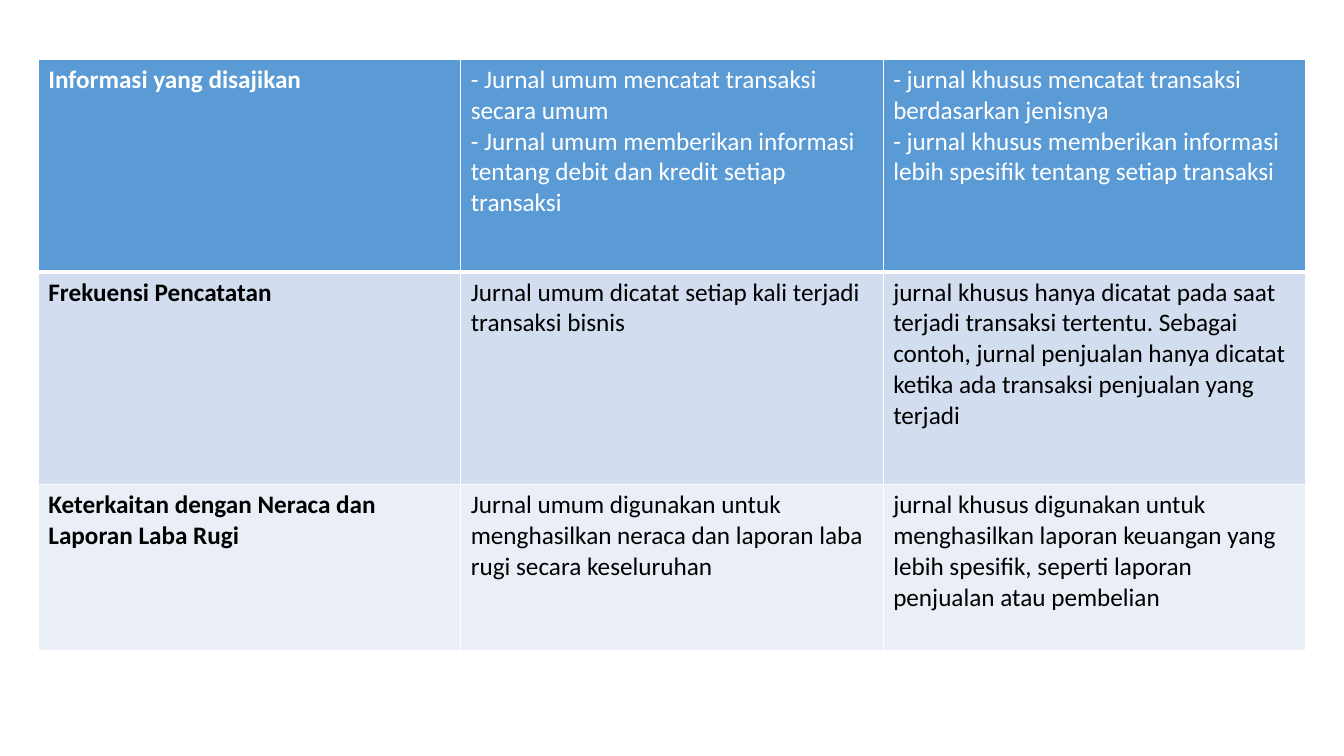
from dataclasses import dataclass

from lxml.etree import SubElement
from pptx import Presentation
from pptx.dml.color import RGBColor as RGB
from pptx.oxml.ns import qn
from pptx.util import Inches, Pt


@dataclass(frozen=True)
class Theme:
    font: str = "Calibri"
    size: int = 18
    header_fill: str = "5B9BD5"
    band_fills: tuple = ("D2DEEF", "EAEFF7")
    header_text: str = "FFFFFF"
    body_text: str = "000000"
    border: str = "FFFFFF"
    thin: int = 1
    thick: int = 3


class SlideBuilder:
    def __init__(self, slide, theme):
        self.slide = slide
        self.theme = theme

    def borders(self, cell, **widths):
        properties = cell._tc.get_or_add_tcPr()
        for side in "LRTB":
            width = widths.get(side, self.theme.thin)
            line = SubElement(properties, qn(f"a:ln{side}"), w=str(Pt(width)))
            fill = SubElement(line, qn("a:solidFill"))
            SubElement(fill, qn("a:srgbClr"), val=self.theme.border)

    def cell(self, cell, text, fill, color, bold):
        cell.text = text
        cell.fill.solid()
        cell.fill.fore_color.rgb = RGB.from_string(fill)
        for paragraph in cell.text_frame.paragraphs:
            font = paragraph.font
            font.name = self.theme.font
            font.size = Pt(self.theme.size)
            font.bold = bold
            font.color.rgb = RGB.from_string(color)

    def table(self, left, top, column_width, row_heights, rows):
        theme = self.theme
        columns = len(rows[0])
        table = self.slide.shapes.add_table(
            len(rows), columns, Inches(left), Inches(top),
            Inches(column_width * columns), Inches(sum(row_heights)),
        ).table
        for column in table.columns:
            column.width = Inches(column_width)
        for r, (texts, height) in enumerate(zip(rows, row_heights)):
            table.rows[r].height = Inches(height)
            if r == 0:
                fill, color, edges = theme.header_fill, theme.header_text, {"B": theme.thick}
            else:
                fill = theme.band_fills[(r - 1) % len(theme.band_fills)]
                color = theme.body_text
                edges = {"T": theme.thick} if r == 1 else {}
            for c, text in enumerate(texts):
                self.borders(table.cell(r, c), **edges)
                self.cell(table.cell(r, c), text, fill, color, bold=c == 0)


JOURNAL_COMPARISON = [
    (
        "Informasi yang disajikan",
        "- Jurnal umum mencatat transaksi secara umum\n"
        "- Jurnal umum memberikan informasi tentang debit dan kredit setiap transaksi",
        "- jurnal khusus mencatat transaksi berdasarkan jenisnya\n"
        "- jurnal khusus memberikan informasi lebih spesifik tentang setiap transaksi",
    ),
    (
        "Frekuensi Pencatatan",
        "Jurnal umum dicatat setiap kali terjadi transaksi bisnis",
        "jurnal khusus hanya dicatat pada saat terjadi transaksi tertentu. Sebagai contoh, "
        "jurnal penjualan hanya dicatat ketika ada transaksi penjualan yang terjadi",
    ),
    (
        "Keterkaitan dengan Neraca dan Laporan Laba Rugi",
        "Jurnal umum digunakan untuk menghasilkan neraca dan laporan laba rugi "
        "secara keseluruhan",
        "jurnal khusus digunakan untuk menghasilkan laporan keuangan yang lebih spesifik, "
        "seperti laporan penjualan atau pembelian",
    ),
]


def main():
    deck = Presentation()
    deck.slide_width, deck.slide_height = Inches(13.33), Inches(7.5)
    blank_layout = deck.slide_layouts[6]
    builder = SlideBuilder(deck.slides.add_slide(blank_layout), Theme())
    builder.table(0.38, 0.59, 4.19, (2.11, 2.11, 1.64), JOURNAL_COMPARISON)
    deck.save("out.pptx")


if __name__ == "__main__":
    main()
